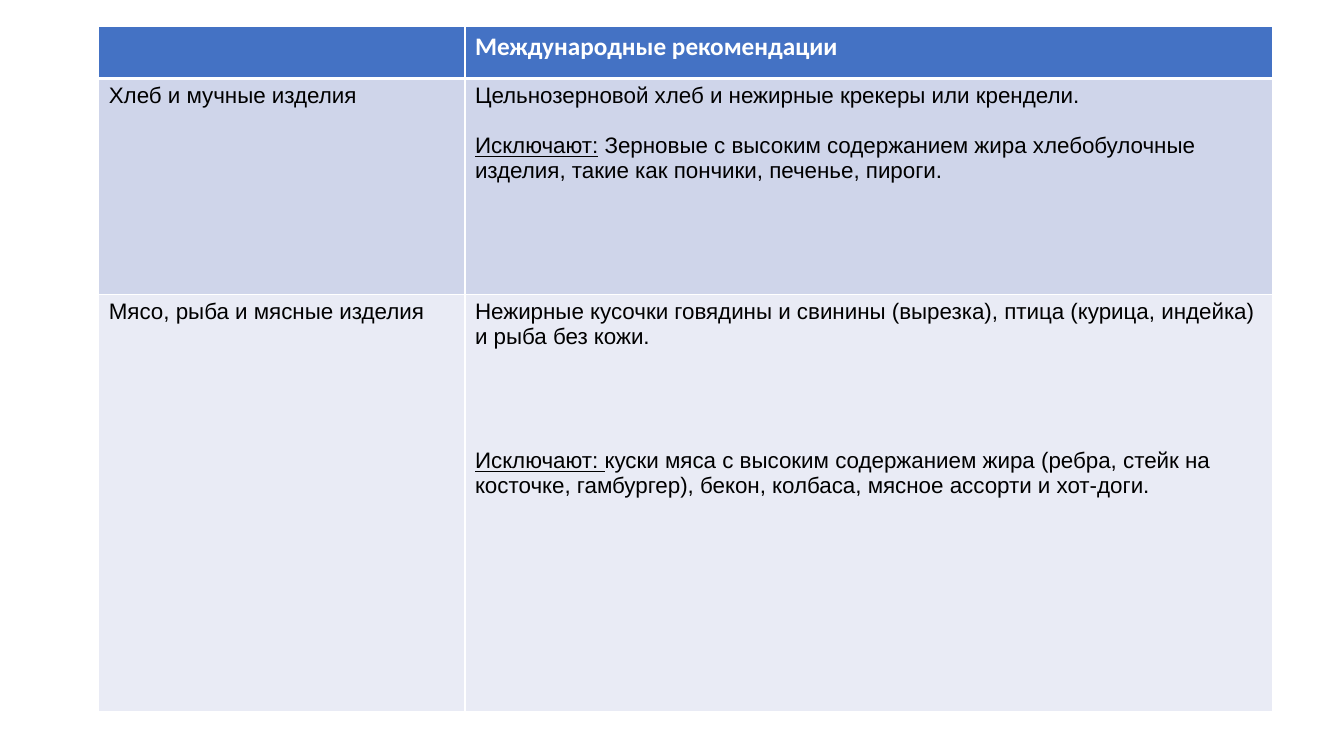
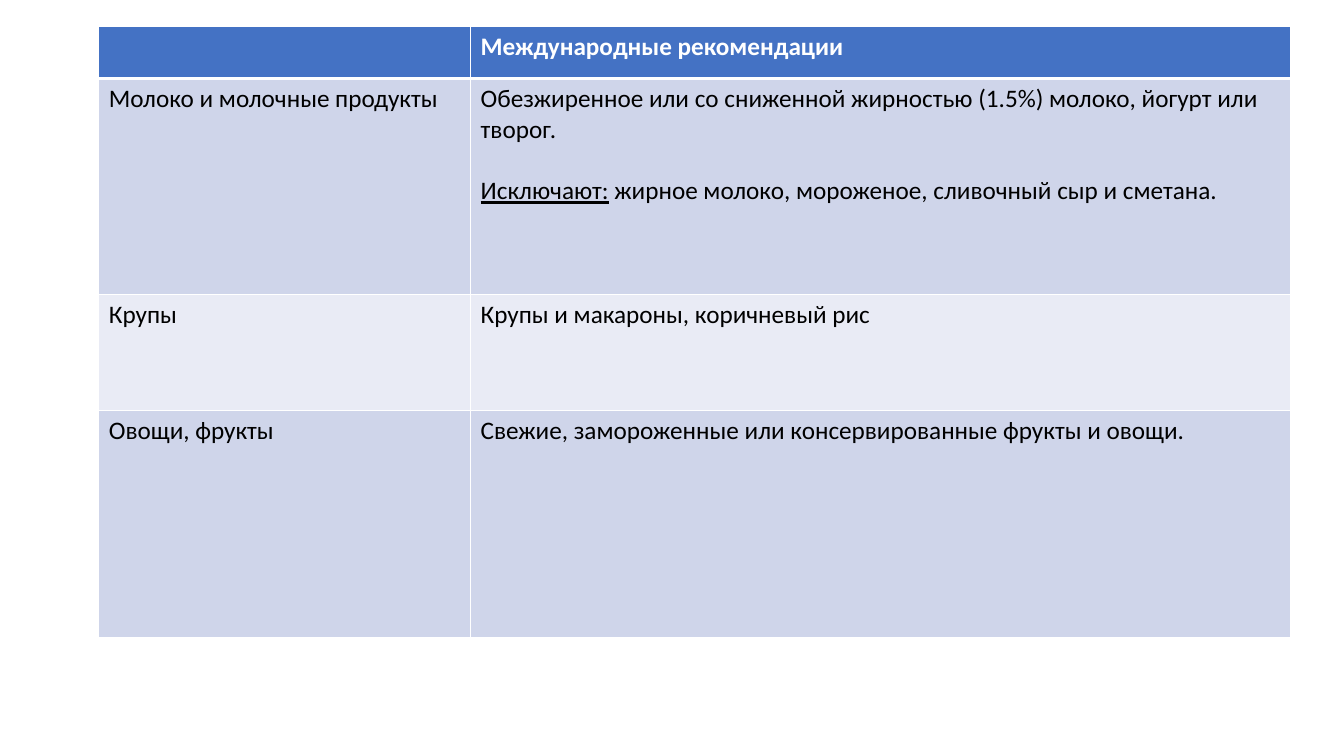
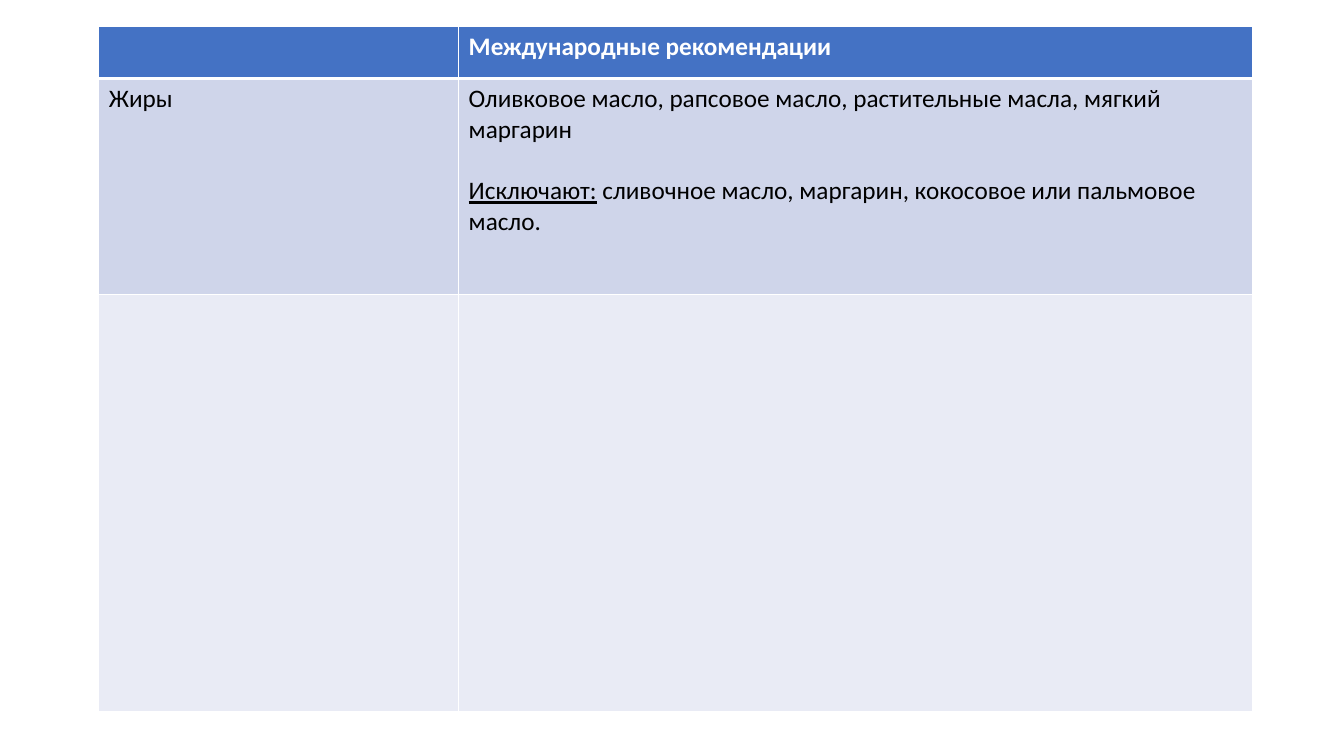
from dataclasses import dataclass

from lxml.etree import SubElement
from pptx import Presentation
from pptx.dml.color import RGBColor
from pptx.oxml.ns import qn
from pptx.util import Inches, Pt

SLIDE_WIDTH, SLIDE_HEIGHT = 13.33, 7.5
TABLE_LEFT, TABLE_TOP = 0.98, 0.26
PRODUCT_SHARE = 0.312
HEADER_HEIGHT, FIRST_HEIGHT, REST_HEIGHT = 0.52, 2.14, 4.14
HEADER_FILL, BANDS = "4472C4", ("CFD5EA", "E9EBF5")
WHITE, BLACK = "FFFFFF", "000000"
HEADING = "Международные рекомендации"


@dataclass
class Food:
    """One row: a product group, its advice and what to exclude."""

    height: float
    product: str = ""
    advice: str = ""
    label: str = "Исключают:"
    excluded: str = ""
    gap: float = 22


def rgb(color):
    """Turn a hex string into a colour."""
    return RGBColor.from_string(color)


def add_border(cell, side, width):
    """Draw a white line on one side of a cell."""
    line = SubElement(cell._tc.get_or_add_tcPr(), qn(f"a:ln{side}"), w=str(Pt(width)))
    fill = SubElement(line, qn("a:solidFill"))
    SubElement(fill, qn("a:srgbClr"), val=WHITE)


def style_cell(cell, fill, bottom=1):
    """Give a cell its borders and fill."""
    for side, width in zip("LRTB", (1, 1, 1, bottom)):
        add_border(cell, side, width)
    cell.fill.solid()
    cell.fill.fore_color.rgb = rgb(fill)


def style_text(cell, font, size, color=BLACK, bold=False):
    """Format every run of a cell."""
    for paragraph in cell.text_frame.paragraphs:
        for run in paragraph.runs:
            run.font.name = font
            run.font.size = Pt(size)
            run.font.bold = bold
            run.font.color.rgb = rgb(color)


def add_exclusion(cell, food):
    """Add the underlined label and the excluded products below the advice."""
    paragraph = cell.text_frame.add_paragraph()
    paragraph.space_before = Pt(food.gap)
    for text, underlined in ((food.label, True), (food.excluded, False)):
        run = paragraph.add_run()
        run.text = text
        run.font.underline = underlined


def add_food_slide(deck, width, foods, font="Calibri", size=18):
    """Add a slide with a table of recommendations."""
    slide = deck.slides.add_slide(deck.slide_layouts[6])
    heights = [HEADER_HEIGHT] + [food.height for food in foods]
    table = slide.shapes.add_table(
        len(heights), 2, Inches(TABLE_LEFT), Inches(TABLE_TOP),
        Inches(width), Inches(sum(heights))).table
    for column, share in zip(table.columns, (PRODUCT_SHARE, 1 - PRODUCT_SHARE)):
        column.width = Inches(width * share)
    for row, height in zip(table.rows, heights):
        row.height = Inches(height)

    for cell in table.rows[0].cells:
        style_cell(cell, HEADER_FILL, bottom=3)
    heading = table.cell(0, 1)
    heading.text_frame.text = HEADING
    style_text(heading, "Calibri", 18, WHITE, bold=True)

    for index, food in enumerate(foods):
        product, advice = table.rows[index + 1].cells
        product.text_frame.text = food.product
        advice.text_frame.text = food.advice
        if food.excluded:
            add_exclusion(advice, food)
        for cell in (product, advice):
            style_cell(cell, BANDS[index % 2])
            style_text(cell, font, size)


def main():
    """Build the three slides and save them."""
    deck = Presentation()
    deck.slide_width, deck.slide_height = Inches(SLIDE_WIDTH), Inches(SLIDE_HEIGHT)
    add_food_slide(deck, 11.64, [
        Food(FIRST_HEIGHT, "Хлеб и мучные изделия",
             "Цельнозерновой хлеб и нежирные крекеры или крендели.",
             excluded=" Зерновые с высоким содержанием жира хлебобулочные "
                      "изделия, такие как пончики, печенье, пироги.", gap=18),
        Food(REST_HEIGHT, "Мясо, рыба и мясные изделия",
             "Нежирные кусочки говядины и свинины (вырезка), птица "
             "(курица, индейка) и рыба без кожи.", label="Исключают: ",
             excluded="куски мяса с высоким содержанием жира (ребра, стейк на "
                      "косточке, гамбургер), бекон, колбаса, мясное ассорти "
                      "и хот-доги.", gap=71),
    ], font="Arial", size=16)
    add_food_slide(deck, 11.82, [
        Food(FIRST_HEIGHT, "Молоко и молочные продукты",
             "Обезжиренное или со сниженной жирностью (1.5%) молоко, "
             "йогурт или творог.",
             excluded=" жирное молоко, мороженое, сливочный сыр и сметана."),
        Food(1.15, "Крупы", "Крупы и макароны, коричневый рис"),
        Food(2.26, "Овощи, фрукты",
             "Свежие, замороженные или консервированные фрукты и овощи."),
    ])
    add_food_slide(deck, 11.44, [
        Food(FIRST_HEIGHT, "Жиры",
             "Оливковое масло, рапсовое масло, растительные масла, "
             "мягкий маргарин",
             excluded=" сливочное масло, маргарин, кокосовое или "
                      "пальмовое масло."),
        Food(REST_HEIGHT),
    ])
    deck.save("out.pptx")


if __name__ == "__main__":
    main()
